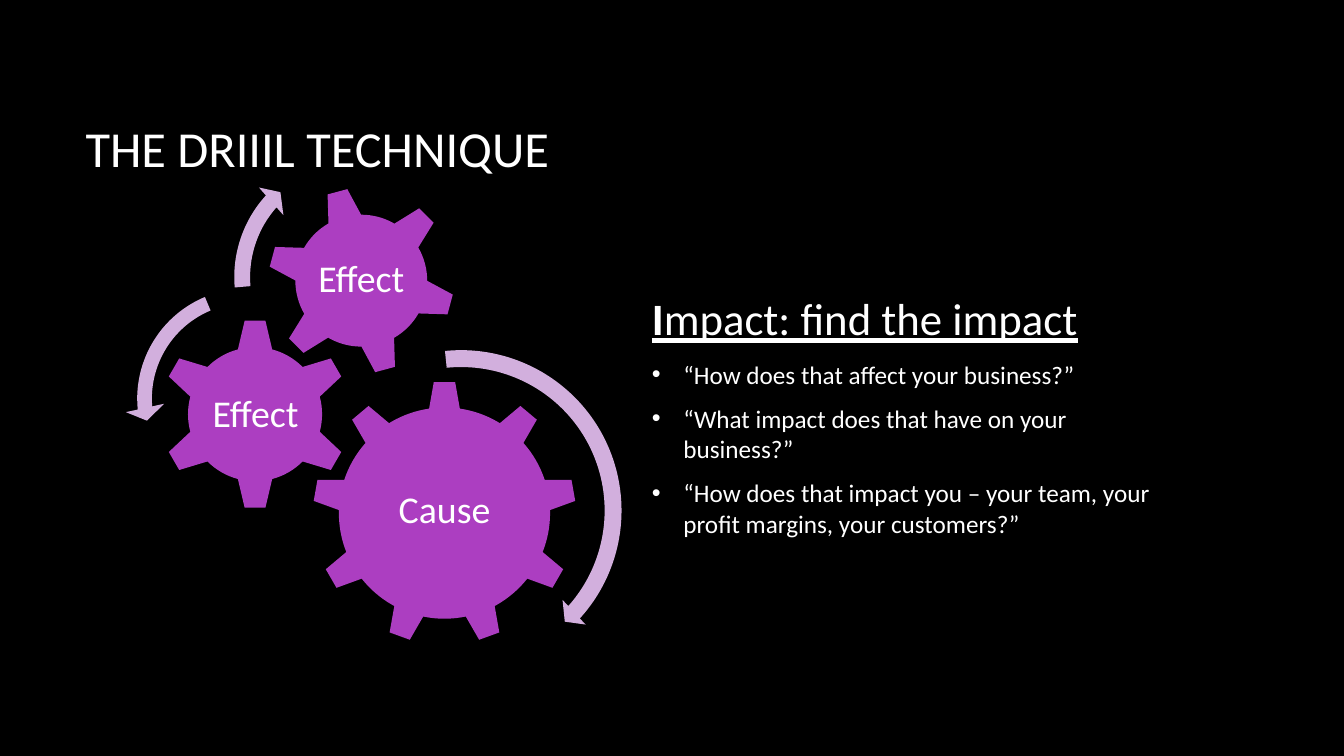
import pptx
import pptx.util
import pptx.dml.color
import pptx.enum.shapes
import pptx.enum.text
import pptx.oxml
import pptx.oxml.ns

Pt = pptx.util.Pt
SHAPE = pptx.enum.shapes.MSO_SHAPE
ALIGN = pptx.enum.text.PP_ALIGN

THEME = {
    "font": "Calibri",
    "background": "000000", "text": "FFFFFF",
    "gear": "AC3EC1", "arrow": "D2AFDD",
    "title": 36, "heading": 32, "question": 18, "gear_label": 27,
}

TITLE = "THE DRIIIL TECHNIQUE"
HEADING_INITIAL, HEADING_REST = "I", "mpact: find the impact"
QUESTIONS = [
    "“How does that affect your business?”",
    "“What impact does that have on your business?”",
    "“How does that impact you – your team, your profit margins, your customers?”",
]

# Boxes are left, top, width, height in points.
TITLE_BOX = (54, 48.2, 797.8, 114.5)
IMPACT_BOX = (458.6, 168.5, 393.1, 255.3)
BULLET_INDENT = 22.5
PARAGRAPH_GAP = 10
LABEL_INSET = 2.9

# Label, outline, left, top, size, rotation, label box
GEARS = [
    ("Cause", SHAPE.GEAR_9, 223.2, 272.2, 188.6, 0, (261.4, 316.8, 112.3, 97.2)),
    ("Effect", SHAPE.GEAR_6, 113.8, 227.5, 136.8, 0, (148.3, 262.8, 68.4, 67.7)),
    ("Effect", SHAPE.GEAR_6, 190.8, 133.2, 134.6, 345, (220.3, 162.7, 75.6, 75.6)),
]
# Outline, left, top, size, adjustments
TURN_ARROWS = [
    (SHAPE.CIRCULAR_ARROW, 208.8, 244.1, 241.2, (0.05, 2.99, 25.2, 158.53, 0.05)),
    (SHAPE.LEFT_CIRCULAR_ARROW, 89.3, 197.3, 175, (0.06, 4.3, 104.89, 148.38, 0.08)),
    (SHAPE.CIRCULAR_ARROW, 159.8, 103.7, 188.6, (0.06, 3.94, 133.14, 105.08, 0.07)),
]


def rgb(role):
    return pptx.dml.color.RGBColor.from_string(THEME[role])


def points(*lengths):
    return [Pt(length) for length in lengths]


def set_font(paragraph, role):
    paragraph.font.name = THEME["font"]
    paragraph.font.size = Pt(THEME[role])
    paragraph.font.color.rgb = rgb("text")


def add_text_frame(slide, box, wrap=True):
    """Add a vertically centred text box and return its frame."""
    frame = slide.shapes.add_textbox(*points(*box)).text_frame
    frame.word_wrap = wrap
    frame.vertical_anchor = pptx.enum.text.MSO_ANCHOR.MIDDLE
    return frame


def add_flat_shape(slide, outline, left, top, size, role):
    shape = slide.shapes.add_shape(outline, *points(left, top, size, size))
    shape.shadow.inherit = False
    shape.fill.solid()
    shape.fill.fore_color.rgb = rgb(role)
    shape.line.fill.background()
    return shape


def add_bullet(paragraph):
    properties = paragraph._p.get_or_add_pPr()
    properties.set("marL", str(Pt(BULLET_INDENT)))
    properties.set("indent", str(-Pt(BULLET_INDENT)))
    namespace = pptx.oxml.ns.nsdecls("a")
    for xml in (
        f'<a:buClr {namespace}><a:srgbClr val="{THEME["text"]}"/></a:buClr>',
        f'<a:buFont {namespace} typeface="Arial"/>',
        f'<a:buChar {namespace} char="•"/>',
    ):
        properties.append(pptx.oxml.parse_xml(xml))


def add_title(slide):
    title = add_text_frame(slide, TITLE_BOX).paragraphs[0]
    title.text = TITLE
    set_font(title, "title")


def add_gears(slide):
    for label, outline, left, top, size, rotation, label_box in GEARS:
        gear = add_flat_shape(slide, outline, left, top, size, "gear")
        gear.rotation = rotation
        frame = add_text_frame(slide, label_box, wrap=False)
        frame.margin_left = frame.margin_right = Pt(LABEL_INSET)
        frame.margin_top = frame.margin_bottom = Pt(LABEL_INSET)
        caption = frame.paragraphs[0]
        caption.text = label
        caption.alignment = ALIGN.CENTER
        caption.line_spacing = 0.9
        set_font(caption, "gear_label")


def add_turn_arrows(slide):
    for outline, left, top, size, adjustments in TURN_ARROWS:
        arrow = add_flat_shape(slide, outline, left, top, size, "arrow")
        for index, value in enumerate(adjustments):
            arrow.adjustments[index] = value


def add_impact(slide):
    frame = add_text_frame(slide, IMPACT_BOX)
    heading = frame.paragraphs[0]
    heading.space_after = Pt(PARAGRAPH_GAP)
    set_font(heading, "heading")
    for text, bold in ((HEADING_INITIAL, True), (HEADING_REST, False)):
        run = heading.add_run()
        run.text = text
        run.font.bold = bold
        run.font.underline = True
    for text in QUESTIONS:
        question = frame.add_paragraph()
        question.text = text
        question.space_after = Pt(PARAGRAPH_GAP)
        add_bullet(question)
        set_font(question, "question")


def main():
    deck = pptx.Presentation()
    deck.slide_width, deck.slide_height = points(960, 540)
    slide = deck.slides.add_slide(deck.slide_layouts[6])
    slide.background.fill.solid()
    slide.background.fill.fore_color.rgb = rgb("background")
    add_title(slide)
    add_gears(slide)
    add_turn_arrows(slide)
    add_impact(slide)
    deck.save("out.pptx")


if __name__ == "__main__":
    main()
